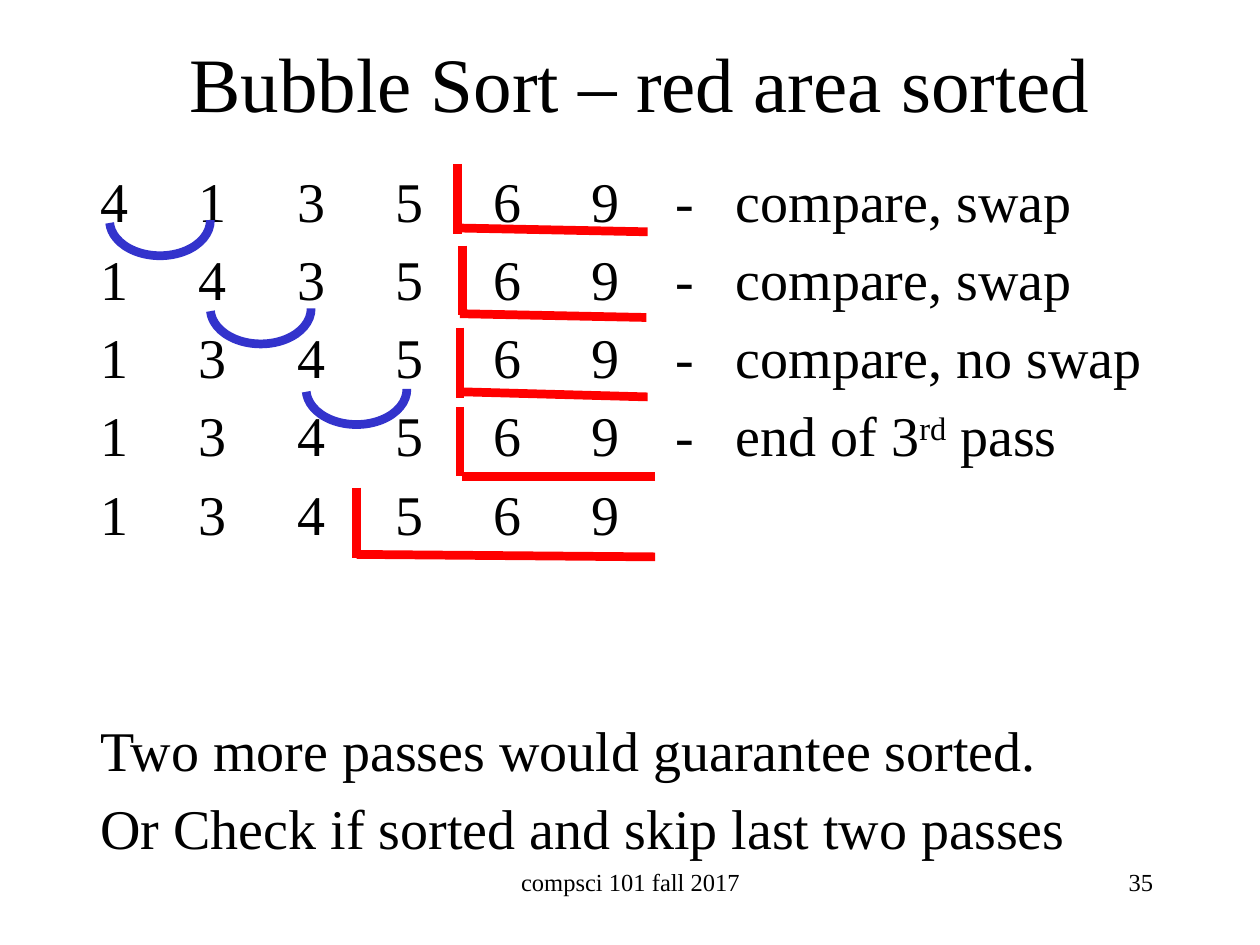
"""Build the bubble sort slide showing the third pass."""
import pptx
import pptx.util
import pptx.dml.color
import pptx.enum.shapes
import pptx.enum.text
import pptx.oxml
import lxml.etree

Inches, Pt = pptx.util.Inches, pptx.util.Pt
ALIGN = pptx.enum.text.PP_ALIGN
COLORS = {"text": "000000", "swap": "3333CC", "sorted": "FF0000"}
A = "http://schemas.openxmlformats.org/drawingml/2006/main"

prs = pptx.Presentation()
prs.slide_width, prs.slide_height = Inches(10), Inches(7.5)
s = prs.slides.add_slide(prs.slide_layouts[6])


def rgb(name):
    return pptx.dml.color.RGBColor.from_string(COLORS[name])


def add_text(box, lines, size, align=ALIGN.LEFT):
    tf = s.shapes.add_textbox(*[Inches(v) for v in box]).text_frame
    tf.word_wrap = True
    for i, line in enumerate(lines):
        p = tf.paragraphs[0] if i == 0 else tf.add_paragraph()
        p.alignment = align
        for j, part in enumerate(line.split("^")):
            r = p.add_run()
            r.text = part
            r.font.name = "Times New Roman"
            r.font.size = Pt(size)
            r.font.color.rgb = rgb("text")
            if j == 1:
                r.font._element.set("baseline", "30000")
    return tf


tf = add_text((0.83, 0.02, 8.5, 1.25), ["Bubble Sort – red area sorted"], 44, ALIGN.CENTER)
tf.vertical_anchor = pptx.enum.text.MSO_ANCHOR.MIDDLE

rows = [
    ("413569", "compare, swap"),
    ("143569", "compare, swap"),
    ("134569", "compare, no swap"),
    ("134569", "end of 3^rd^ pass"),
    ("134569", ""),
]
lines = ["\t".join(list(digits) + (["-", note] if note else [])) for digits, note in rows]
lines += ["Two more passes would guarantee sorted.", "Or Check if sorted and skip last two passes"]
tf = add_text((0.7, 1.27, 9, 5.92), lines, 32)
stops = [0.78 * i for i in range(1, 6)] + [4.56, 5.04]
for i, p in enumerate(tf.paragraphs):
    p.space_before = Pt(96.4 if i == len(rows) else 6.3)
    if i < len(rows):
        tabs = lxml.etree.SubElement(p._p.get_or_add_pPr(), f"{{{A}}}tabLst")
        for stop in stops:
            lxml.etree.SubElement(tabs, f"{{{A}}}tab", pos=str(Inches(stop)), algn="l")

for x, y in [(0.87, 1.47), (1.67, 2.17), (2.43, 2.81)]:
    sp = s.shapes.add_shape(pptx.enum.shapes.MSO_SHAPE.ARC, Inches(x), Inches(y), Inches(0.8), Inches(0.56))
    sp.adjustments[0], sp.adjustments[1] = 215.73, 106.31
    sp.shadow.inherit = False
    sp.fill.background()
    sp.line.color.rgb = rgb("swap")
    sp.line.width = Pt(5)

brackets = [
    ((3.63, 1.3, 3.63, 1.86), (5.14, 1.84, 3.65, 1.81)),
    ((3.67, 1.95, 3.67, 2.5), (5.13, 2.52, 3.65, 2.49)),
    ((3.65, 2.6, 3.65, 3.16), (5.14, 3.15, 3.67, 3.11)),
    ((3.65, 3.23, 3.65, 3.78), (5.2, 3.78, 3.67, 3.78)),
    ((2.83, 3.87, 2.83, 4.43), (5.2, 4.42, 2.83, 4.4)),
]
for bracket in brackets:
    for ends in bracket:
        line = s.shapes.add_connector(pptx.enum.shapes.MSO_CONNECTOR.STRAIGHT, *[Inches(v) for v in ends])
        line.line.color.rgb = rgb("sorted")
        line.line.width = Pt(5)
        lxml.etree.SubElement(line._element.spPr, f"{{{A}}}effectLst")

add_text((3.42, 6.83, 3.17, 0.5), ["compsci 101 fall 2017"], 14, ALIGN.CENTER)
add_text((7.17, 6.83, 2.08, 0.5), ["35"], 14, ALIGN.RIGHT)

prs.save("out.pptx")
